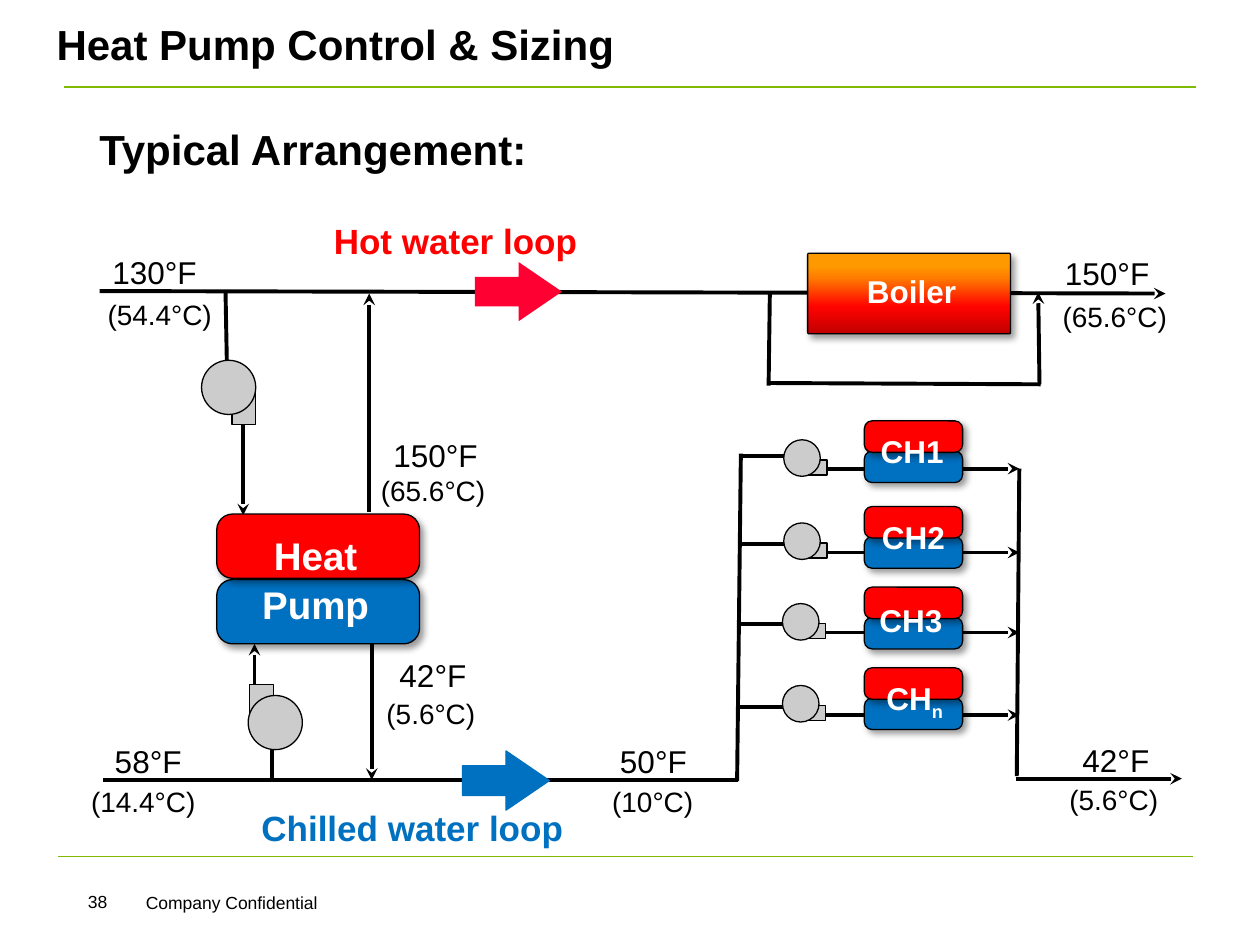
"""Builds the heat pump control and sizing slide on a grid of 100 columns by 75 rows."""
from lxml import etree
from pptx import Presentation
from pptx.dml.color import RGBColor
from pptx.enum.shapes import MSO_CONNECTOR, MSO_SHAPE
from pptx.enum.text import MSO_ANCHOR, MSO_AUTO_SIZE, PP_ALIGN
from pptx.oxml import parse_xml
from pptx.oxml.ns import nsdecls, qn
from pptx.util import Inches, Pt

STRAIGHT = MSO_CONNECTOR.STRAIGHT
ROUND, RECT, OVAL = MSO_SHAPE.ROUNDED_RECTANGLE, MSO_SHAPE.RECTANGLE, MSO_SHAPE.OVAL
UP, DOWN = MSO_SHAPE.UP_ARROW, MSO_SHAPE.DOWN_ARROW
LEFT, CENTER, RIGHT = PP_ALIGN.LEFT, PP_ALIGN.CENTER, PP_ALIGN.RIGHT
TOP, MIDDLE = MSO_ANCHOR.TOP, MSO_ANCHOR.MIDDLE
BLACK, WHITE, RED, BLUE, GRAY, GREEN = "000000", "FFFFFF", "FF0000", "0070C0", "CCCCCC", "7DBA00"
HOT_ARROW = "FF0033"
SHADOW = (
    f'<a:effectLst {nsdecls("a")}><a:outerShdw blurRad="50800" dist="38100" dir="2700000" '
    'algn="tl" rotWithShape="0"><a:srgbClr val="000000"><a:alpha val="40000"/></a:srgbClr>'
    "</a:outerShdw></a:effectLst>"
)

prs = Presentation()
prs.slide_width, prs.slide_height = Inches(10), Inches(7.5)
COL, ROW = prs.slide_width // 100, prs.slide_height // 75
slide = prs.slides.add_slide(prs.slide_layouts[6])
color = RGBColor.from_string


def block(kind, x, y, w, h, fill, line=BLACK, corner=None):
    """Add a filled shape; rounded ones with a corner share also get a shadow."""
    shape = slide.shapes.add_shape(kind, int(x * COL), int(y * ROW), int(w * COL), int(h * ROW))
    shape.shadow.inherit = False
    shape.fill.solid()
    shape.fill.fore_color.rgb = color(fill)
    if line:
        shape.line.color.rgb = color(line)
        shape.line.width = Pt(0.75)
    else:
        shape.line.fill.background()
    if corner is not None:
        shape.adjustments[0] = corner
        properties = shape._element.spPr
        properties.replace(properties.find(qn("a:effectLst")), parse_xml(SHADOW))
    return shape


def write(text, x, y, w, h, size, ink=BLACK, bold=False, align=LEFT, wrap=True, anchor=TOP):
    """Add a text box; white lettering gets a shadow."""
    box = slide.shapes.add_textbox(int(x * COL), int(y * ROW), int(w * COL), int(h * ROW))
    frame = box.text_frame
    frame.text = text
    frame.word_wrap = wrap
    frame.vertical_anchor = anchor
    frame.auto_size = MSO_AUTO_SIZE.NONE if anchor == MIDDLE else MSO_AUTO_SIZE.SHAPE_TO_FIT_TEXT
    paragraph = frame.paragraphs[0]
    paragraph.alignment = align
    run = paragraph.runs[0]
    run.font.size, run.font.bold, run.font.name = Pt(size), bold, "Arial"
    run.font.color.rgb = color(ink)
    if ink == WHITE:
        run.font._element.find(qn("a:solidFill")).addnext(parse_xml(SHADOW))
    return paragraph


chillers = [
    ("CH1", 68.6, 33.4, 33.8, 62.2, 34.9, 36.2, 37.2),
    ("CH2", 68.7, 40.2, 40.6, 62.2, 41.5, 43.2, 43.85),
    ("CH3", 68.5, 46.6, 47.2, 62.1, 47.9, 49.55, 50.2),
    ("CH", 68.8, 53, 53.4, 62.1, 54.4, 56.1, 56.75),
]

pipes = [
    (7.9, 23.1, 92.5, 23.3, True),
    (17.9, 23.1, 18, 28.6, False),
    (19.3, 30.4, 19.3, 40.9, True),
    (29.3, 40.6, 29.3, 23.3, True),
    (61.1, 23.3, 61, 30.6, False),
    (61.1, 30.4, 82.6, 30.5, False),
    (82.5, 30.5, 82.4, 23.2, True),
    (20.2, 54.7, 20.2, 51.1, True),
    (21.6, 61.9, 21.6, 59.5, False),
    (29.5, 50.7, 29.5, 61.9, True),
    (8.2, 61.9, 58.6, 61.9, False),
    (58.5, 62, 58.8, 36, False),
    (80.7, 61.6, 80.9, 37.2, False),
    (80.6, 61.8, 93.8, 61.8, True),
]
for _, _, _, _, pump_x, _, feed, outlet in chillers:
    pipes += [(58.65, feed, pump_x + 0.1, feed, False), (pump_x + 3, outlet, 80.9, outlet, True)]

rules = [(4.6, 68, 94.7, 68, GREEN, 0.75, False), (5.1, 6.9, 94.9, 6.9, GREEN, 0.75, False)]
for x1, y1, x2, y2, ink, weight, arrow in rules + [(*p[:4], BLACK, 2.25, p[4]) for p in pipes]:
    pipe = slide.shapes.add_connector(
        STRAIGHT, int(x1 * COL), int(y1 * ROW), int(x2 * COL), int(y2 * ROW))
    pipe.line.color.rgb = color(ink)
    pipe.line.width = Pt(weight)
    if arrow:
        etree.SubElement(pipe.line._get_or_add_ln(), qn("a:tailEnd"), type="stealth")
    etree.SubElement(pipe._element.spPr, qn("a:effectLst"))

boiler = block(ROUND, 64.1, 20.1, 16.1, 6.4, RED, corner=0.018)
boiler.fill.gradient()
boiler.fill.gradient_angle = 270
stops = boiler._element.spPr.find(".//" + qn("a:gsLst"))
for stop in list(stops):
    stops.remove(stop)
for share, shade in [(16, "FF9900"), (31, "FF7A00"), (66, "FF0300"), (100, "C00000")]:
    stop = etree.SubElement(stops, qn("a:gs"), pos=str(share * 1000))
    etree.SubElement(stop, qn("a:srgbClr"), val=shade)
write("Boiler", 65, 21.1, 14.7, 4, 18, WHITE, True, CENTER)

block(ROUND, 17.2, 46, 16.1, 5.1, BLUE, corner=0.247)
block(ROUND, 17.2, 40.8, 16.1, 5.1, RED, corner=0.247)
write("Heat Pump", 18.4, 41.5, 13.3, 8.4, 22, WHITE, True, CENTER).line_spacing = 1.06

for outlet_x, outlet_y, pump_x, pump_y in [(18.4, 30.6, 16, 28.6), (19.8, 54.3, 19.7, 55.2)]:
    block(RECT, outlet_x, outlet_y, 1.9, 3.1, GRAY)
    block(OVAL, pump_x, pump_y, 4.3, 4.3, GRAY)

for name, name_x, top, name_y, pump_x, pump_y, _, _ in chillers:
    block(ROUND, 68.6, top + 2.4, 7.8, 2.5, BLUE, corner=0.247)
    block(ROUND, 68.6, top, 7.8, 2.5, RED, corner=0.247)
    label = write(name, name_x, name_y, 7.6, 4, 18, WHITE, True, CENTER)
    block(RECT, pump_x + 1.35, pump_y + 1.6, 2.1, 1.2, GRAY)
    block(OVAL, pump_x, pump_y, 2.9, 2.9, GRAY)

index = label.add_run()
index.text = "n"
index.font.size, index.font.bold, index.font.name = Pt(18), True, "Arial"
index.font.color.rgb = color(WHITE)
index.font._element.set("baseline", "-25000")
index.font._element.find(qn("a:solidFill")).addnext(parse_xml(SHADOW))

for kind, x, y, turn, fill, line in [
    (UP, 38.8, 19.7, 90, HOT_ARROW, None),
    (DOWN, 37.8, 58.5, 270, BLUE, BLUE),
]:
    flow = block(kind, x, y, 4.7, 6.9, fill, line)
    flow.adjustments[0], flow.adjustments[1] = 0.5, 0.732
    flow.rotation = turn

for reading, x, y, w in [
    ("130°F", 7.8, 19.6, 8.8), ("150°F", 30.1, 34.1, 8.8), ("150°F", 83.4, 19.7, 8.8),
    ("42°F", 30.6, 51.6, 7.4), ("58°F", 8, 58.4, 7.4), ("42°F", 84.8, 58.3, 7.4),
    ("50°F", 48.1, 58.4, 7.4),
]:
    write(reading, x, y, w, 4, 18, align=RIGHT, wrap=False)

for reading, x, y, w in [
    ("(54.4°C)", 7.4, 23.1, 10.4), ("(65.6°C)", 83.2, 23.3, 10.4), ("(65.6°C)", 29.1, 37.1, 10.4),
    ("(14.4°C)", 6.1, 61.8, 10.4), ("(5.6°C)", 29.5, 54.8, 9.2), ("(10°C)", 47.5, 61.8, 8.5),
    ("(5.6°C)", 83.7, 61.6, 9.2),
]:
    write(reading, x, y, w, 3.7, 16, align=RIGHT, wrap=False)

write("Hot water loop", 25.3, 16.9, 21.5, 4.4, 20, RED, True, RIGHT, False)
write("Chilled water loop", 19.6, 63.5, 26.1, 4.4, 20, BLUE, True, RIGHT, False)
write("Heat Pump Control & Sizing", 3.5, 0, 94.5, 6.9, 24, bold=True, anchor=MIDDLE)
write("Typical Arrangement:", 6.9, 8.9, 60.2, 5.8, 24, bold=True, anchor=MIDDLE)
write("Company Confidential", 10.6, 70.3, 33.5, 2.7, 10)
write("38", 5.1, 70.2, 5.3, 3.1, 10, align=CENTER)

prs.save("out.pptx")
